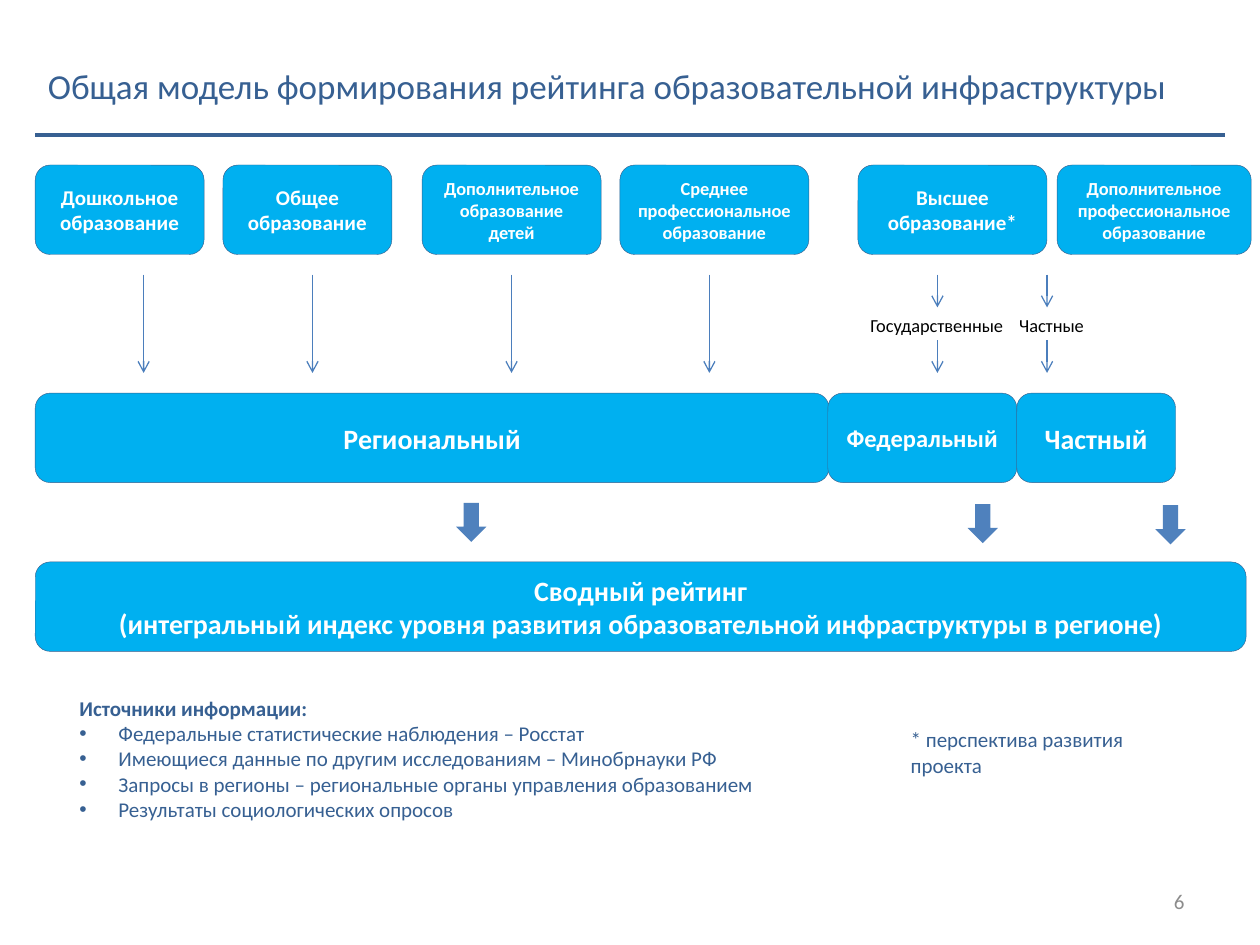
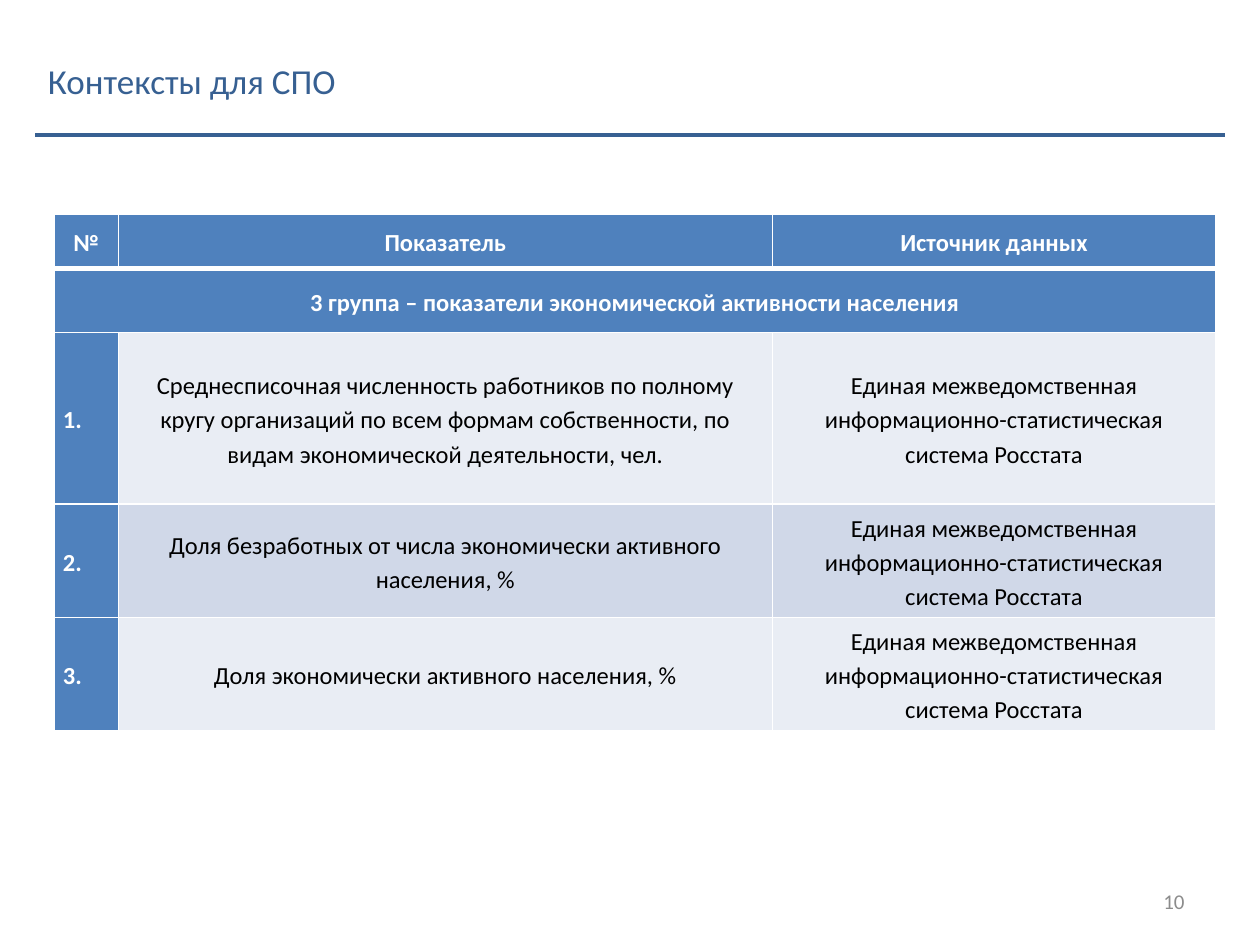
import dataclasses
import typing

import pptx
import pptx.dml.color
import pptx.enum.shapes
import pptx.enum.text
import pptx.oxml.ns
import pptx.util
from lxml import etree

Inches = pptx.util.Inches
Pt = pptx.util.Pt
ALIGN = pptx.enum.text.PP_ALIGN
ANCHOR = pptx.enum.text.MSO_ANCHOR
SHAPE = pptx.enum.shapes.MSO_SHAPE
qn = pptx.oxml.ns.qn


@dataclasses.dataclass(frozen=True)
class Theme:
    font: str = "Calibri"
    heading: str = "376092"
    box_fill: str = "00B0F0"
    box_line: str = "3A5F8C"
    arrow: str = "4B7EBC"
    accent: str = "4F81BD"
    band_light: str = "E9EDF4"
    band_dark: str = "D0D8E8"
    white: str = "FFFFFF"
    black: str = "000000"
    muted: str = "8C8C8C"
    title_size: float = 20
    large_size: float = 16
    medium_size: float = 14
    body_size: float = 12
    small_size: float = 10.5


THEME = Theme()
MARGIN = 0.28
BOX_HEIGHT = 0.71


class Box(typing.NamedTuple):
    text: str
    left: float
    width: float
    size: float


class ArrowGroup(typing.NamedTuple):
    centres: tuple[float, ...]
    top: float
    bottom: float


# Content of the rating model
STAGE_TOP, LEVEL_TOP, SUMMARY_TOP = 1.31, 3.12, 4.46
STAGES = [
    Box("Дошкольное образование", MARGIN, 1.34, THEME.body_size),
    Box("Общее образование", 1.77, 1.34, THEME.body_size),
    Box("Дополнительное образование детей", 3.35, 1.42, THEME.small_size),
    Box("Среднее профессиональное образование", 4.92, 1.5, THEME.small_size),
    Box("Высшее образование*", 6.81, 1.5, THEME.body_size),
    Box("Дополнительное профессиональное образование", 8.39, 1.54, THEME.small_size),
]
LEVELS = [
    Box("Региональный", MARGIN, 6.3, THEME.large_size),
    Box("Федеральный", 6.57, 1.5, THEME.medium_size),
    Box("Частный", 8.07, 1.26, THEME.large_size),
]
SUMMARY = Box(
    "Сводный рейтинг\n"
    "(интегральный индекс уровня развития образовательной инфраструктуры в регионе)",
    MARGIN, 9.61, THEME.large_size,
)
OWNERS = [
    Box("Государственные", 6.81, 1.34, THEME.small_size),
    Box("Частные", 7.99, 0.79, THEME.small_size),
]
OWNER_CENTRES = (7.44, 8.31)
ARROW_GROUPS = [
    ArrowGroup((1.14, 2.48, 4.06, 5.63), 2.18, 2.96),
    ArrowGroup(OWNER_CENTRES, 2.18, 2.44),
    ArrowGroup(OWNER_CENTRES, 2.7, 2.96),
]
BLOCK_ARROWS = [(3.62, 3.99), (7.68, 4.0), (9.17, 4.01)]
SOURCES = [
    "Источники информации:",
    "Федеральные статистические наблюдения – Росстат",
    "Имеющиеся данные по другим исследованиям – Минобрнауки РФ",
    "Запросы в регионы – региональные органы управления образованием",
    "Результаты социологических опросов",
]

# Content of the indicator table
COLUMN_WIDTHS = (0.51, 5.19, 3.52)
ROW_HEIGHTS = (0.43, 0.51, 1.36, 0.9, 0.9)
HEADERS = ("№", "Показатель", "Источник данных")
GROUP_TITLE = "3 группа – показатели экономической активности населения"
DATA_SOURCE = "Единая межведомственная информационно-статистическая система Росстата"
INDICATORS = [
    "Среднесписочная численность работников по полному кругу организаций "
    "по всем формам собственности, по видам экономической деятельности, чел.",
    "Доля безработных от числа экономически активного населения, %",
    "Доля экономически активного населения, %",
]


def rgb(value: str) -> pptx.dml.color.RGBColor:
    return pptx.dml.color.RGBColor.from_string(value)


def place(shape, left: float, top: float, width: float, height: float) -> None:
    shape.left, shape.top = Inches(left), Inches(top)
    shape.width, shape.height = Inches(width), Inches(height)


def format_text(text_frame, size: float, color: str, bold: bool = False,
                align=ALIGN.LEFT, line_spacing: float | None = None) -> None:
    for paragraph in text_frame.paragraphs:
        paragraph.alignment = align
        if line_spacing:
            paragraph.line_spacing = line_spacing
        for run in paragraph.runs:
            run.font.name = THEME.font
            run.font.size = Pt(size)
            run.font.bold = bold
            run.font.color.rgb = rgb(color)


def add_label(slide, text: str, left: float, top: float, width: float, height: float,
              size: float, color: str, align=ALIGN.LEFT, anchor=ANCHOR.TOP) -> None:
    text_frame = slide.shapes.add_textbox(
        Inches(left), Inches(top), Inches(width), Inches(height)).text_frame
    text_frame.word_wrap = True
    text_frame.vertical_anchor = anchor
    text_frame.text = text
    format_text(text_frame, size, color, align=align)


def add_line(slide, start: tuple[float, float], end: tuple[float, float],
             color: str, width: float, arrow: bool = False) -> None:
    connector = slide.shapes.add_connector(
        pptx.enum.shapes.MSO_CONNECTOR.STRAIGHT,
        *(Inches(value) for value in (*start, *end)))
    connector.line.color.rgb = rgb(color)
    connector.line.width = Pt(width)
    if arrow:
        line = connector.line._get_or_add_ln()
        etree.SubElement(line, qn("a:tailEnd"), type="arrow")
    etree.SubElement(connector._element.spPr, qn("a:effectLst"))


def add_box(slide, box: Box, top: float) -> None:
    shape = slide.shapes.add_shape(
        SHAPE.ROUNDED_RECTANGLE, Inches(box.left), Inches(top),
        Inches(box.width), Inches(BOX_HEIGHT))
    shape.shadow.inherit = False
    shape.fill.solid()
    shape.fill.fore_color.rgb = rgb(THEME.box_fill)
    shape.line.color.rgb = rgb(THEME.box_line)
    shape.line.width = Pt(0.25)
    shape.text_frame.text = box.text
    shape.text_frame.vertical_anchor = ANCHOR.MIDDLE
    format_text(shape.text_frame, box.size, THEME.white, True, ALIGN.CENTER)


def add_block_arrow(slide, left: float, top: float) -> None:
    shape = slide.shapes.add_shape(
        SHAPE.DOWN_ARROW, Inches(left), Inches(top), Inches(0.24), Inches(0.31))
    shape.shadow.inherit = False
    shape.fill.solid()
    shape.fill.fore_color.rgb = rgb(THEME.accent)
    shape.line.fill.background()


def add_base_slide(presentation, layout: int, title: str, number: int,
                   title_box: tuple[float, float, float, float]):
    """Add a slide with the shared title, rule and page number."""
    slide = presentation.slides.add_slide(presentation.slide_layouts[layout])
    shape = slide.shapes.title
    place(shape, *title_box)
    shape.text_frame.text = title
    shape.text_frame.auto_size = pptx.enum.text.MSO_AUTO_SIZE.NONE
    shape.text_frame.vertical_anchor = ANCHOR.MIDDLE
    format_text(shape.text_frame, THEME.title_size, THEME.heading)
    add_line(slide, (MARGIN, 1.07), (10 - MARGIN, 1.07), THEME.heading, 2)
    add_label(slide, str(number), 7.17, 6.95, 2.33, 0.4, THEME.body_size,
              THEME.muted, ALIGN.RIGHT, ANCHOR.MIDDLE)
    return slide


def fill_sources(shape) -> None:
    """Write the heading and bulleted list of information sources."""
    place(shape, 0.53, 5.47, 8.64, 1.11)
    text_frame = shape.text_frame
    text_frame.auto_size = pptx.enum.text.MSO_AUTO_SIZE.NONE
    text_frame.text = "\n".join(SOURCES)
    format_text(text_frame, THEME.body_size, THEME.heading)
    for index, paragraph in enumerate(text_frame.paragraphs):
        indent = Inches(0.31) if index else 0
        properties = paragraph._p.get_or_add_pPr()
        properties.set("marL", str(indent))
        properties.set("indent", str(-indent))
        paragraph.space_before = Pt(0)
        if index == 0:
            etree.SubElement(properties, qn("a:buNone"))
            paragraph.runs[0].font.bold = True


def build_model_slide(presentation) -> None:
    slide = add_base_slide(
        presentation, 1, "Общая модель формирования рейтинга образовательной инфраструктуры",
        6, (MARGIN, 0.37, 9.53, 0.62))
    fill_sources(slide.placeholders[1])

    # Education stages, rating levels and the summary
    for boxes, top in ((STAGES, STAGE_TOP), (LEVELS, LEVEL_TOP), ([SUMMARY], SUMMARY_TOP)):
        for box in boxes:
            add_box(slide, box, top)

    # Flow between the rows
    for owner in OWNERS:
        add_label(slide, owner.text, owner.left, 2.44, owner.width, 0.29,
                  owner.size, THEME.black)
    for group in ARROW_GROUPS:
        for centre in group.centres:
            add_line(slide, (centre, group.top), (centre, group.bottom),
                     THEME.arrow, 0.75, arrow=True)
    for left, top in BLOCK_ARROWS:
        add_block_arrow(slide, left, top)

    # Footnote
    add_label(slide, "* перспектива развития проекта", 7.13, 5.72, 2.17, 0.5,
              THEME.body_size, THEME.heading)


def set_borders(cell, top: float, bottom: float) -> None:
    properties = cell._tc.get_or_add_tcPr()
    for side, width in (("L", 1), ("R", 1), ("T", top), ("B", bottom)):
        line = etree.SubElement(properties, qn(f"a:ln{side}"), w=str(Pt(width)))
        fill = etree.SubElement(line, qn("a:solidFill"))
        etree.SubElement(fill, qn("a:srgbClr"), val=THEME.white)


def build_indicator_slide(presentation) -> None:
    slide = add_base_slide(presentation, 5, "Контексты для СПО", 10,
                           (MARGIN, 0.36, 9, 0.55))
    rows = [HEADERS, (GROUP_TITLE, "", "")]
    rows += [(f"{number}.", indicator, DATA_SOURCE)
             for number, indicator in enumerate(INDICATORS, 1)]
    table = slide.shapes.add_table(
        len(rows), len(HEADERS), Inches(0.43), Inches(1.7),
        Inches(sum(COLUMN_WIDTHS)), Inches(sum(ROW_HEIGHTS))).table
    for column, width in zip(table.columns, COLUMN_WIDTHS):
        column.width = Inches(width)
    for row, height in zip(table.rows, ROW_HEIGHTS):
        row.height = Inches(height)
    table.cell(1, 0).merge(table.cell(1, 2))

    for row_index, texts in enumerate(rows):
        band = THEME.band_dark if row_index % 2 else THEME.band_light
        for column_index, text in enumerate(texts):
            cell = table.cell(row_index, column_index)
            heading = row_index < 2 or column_index == 0
            numbering = row_index >= 2 and column_index == 0
            set_borders(cell, 3 if row_index == 1 else 1, 3 if row_index == 0 else 1)
            cell.fill.solid()
            cell.fill.fore_color.rgb = rgb(THEME.accent if heading else band)
            cell.vertical_anchor = ANCHOR.MIDDLE
            cell.margin_left = cell.margin_right = Inches(0.07)
            cell.margin_top = cell.margin_bottom = 0
            if text:
                cell.text_frame.text = text
                format_text(cell.text_frame, THEME.medium_size,
                            THEME.white if heading else THEME.black, heading,
                            ALIGN.LEFT if numbering else ALIGN.CENTER, 1.15)


def main() -> None:
    presentation = pptx.Presentation()
    presentation.slide_width = Inches(10)
    presentation.slide_height = Inches(7.5)
    build_model_slide(presentation)
    build_indicator_slide(presentation)
    presentation.save("out.pptx")


if __name__ == "__main__":
    main()
